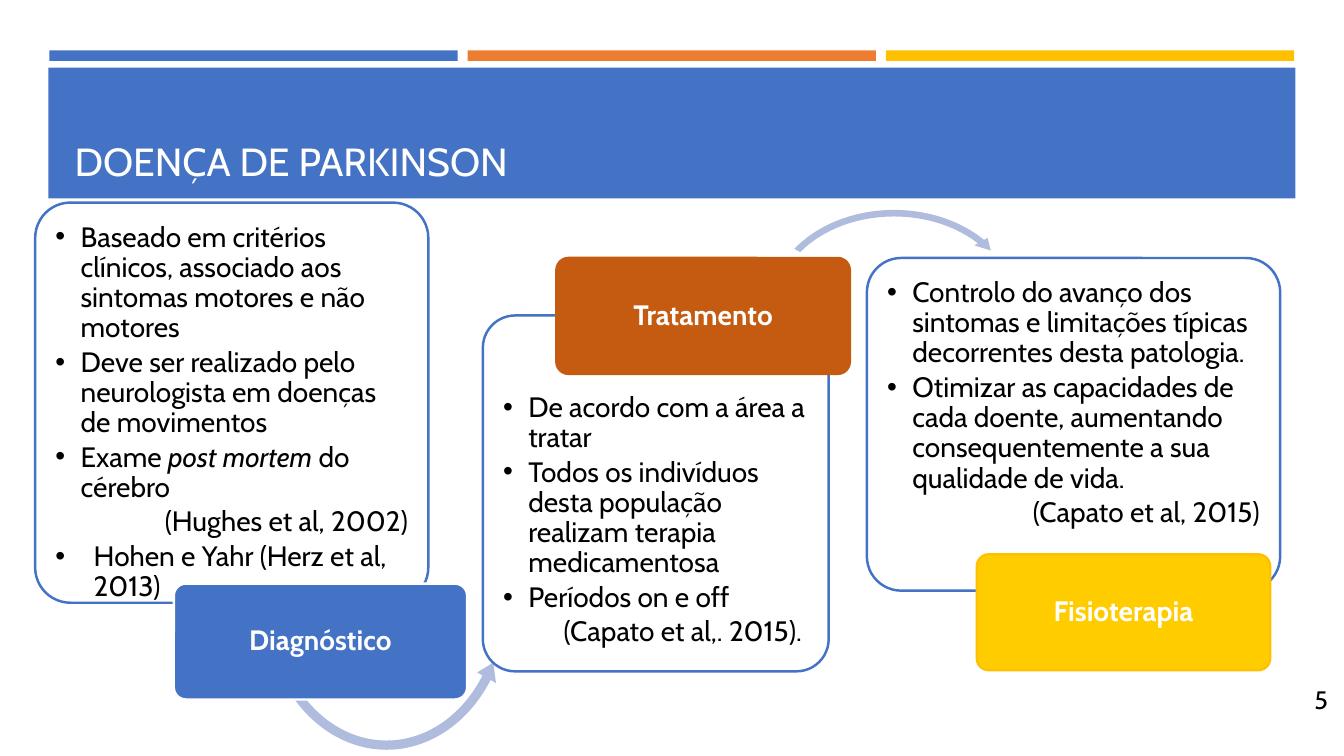
from dataclasses import dataclass

from lxml import etree
from pptx import Presentation
from pptx import util as u
from pptx.dml.color import RGBColor
from pptx.enum import shapes, text
from pptx.oxml.ns import qn

FONT = "Cabin"
BLUE, ORANGE, GOLD = "4472C4", "ED7D31", "FFC000"
RUST, YELLOW, LILAC = "C55A11", "FFCC00", "B0BCDE"
WHITE, BLACK = "FFFFFF", "000000"
WIDTH, HEIGHT = u.Inches(13.33), u.Inches(7.5)
TEXT_CORNER = 0.29  # share of the corner radius added to the text margins


@dataclass
class Area:
    """Left, top, width and height in percent of the slide."""
    left: float
    top: float
    width: float
    height: float

    def place(self) -> tuple[int, int, int, int]:
        return (int(WIDTH * self.left / 100), int(HEIGHT * self.top / 100),
                int(WIDTH * self.width / 100), int(HEIGHT * self.height / 100))


@dataclass
class Item:
    words: str  # parts between asterisks are italic
    indent: float = 0.25
    bullet: bool = True


@dataclass
class Arrow:
    kind: shapes.MSO_SHAPE
    area: Area
    bends: tuple[float, ...]


@dataclass
class Stage:
    panel: Area
    radius: float
    top_margin: float
    items: list[Item]
    label: str
    tag: Area
    fill: str
    line: str
    arrow: Arrow | None = None


def tag_area(left: float, top: float) -> Area:
    return Area(left, top, 21.83, 15.33)


STAGES = [
    Stage(Area(2.62, 26.8, 29.25, 52.93), 0.35, 0.2, [
        Item("Baseado em critérios clínicos, associado aos sintomas motores e não motores"),
        Item("Deve ser realizado pelo neurologista em doenças de movimentos"),
        Item("Exame *post mortem *do cérebro"),
        Item("(Hughes et al, 2002)", 0, False),
        Item("Hohen e Yahr (Herz et al, 2013)", 0.38),
    ], "Diagnóstico", tag_area(12.93, 77.2), BLUE, WHITE,
        Arrow(shapes.MSO_SHAPE.LEFT_CIRCULAR_ARROW, Area(19.2, 59.33, 19.13, 40.67),
              (0.036, 4.492, 22.239, 90.237, 0.042))),
    Stage(Area(35.93, 41.73, 25.73, 47.07), 0.32, 0.77, [
        Item("De acordo com a área a tratar"),
        Item("Todos os indivíduos desta população realizam terapia medicamentosa"),
        Item("Períodos on e off"),
        Item("(Capato et al,. 2015). ", bullet=False),
    ], "Tratamento", tag_area(41.4, 34.13), RUST, RUST,
        Arrow(shapes.MSO_SHAPE.CIRCULAR_ARROW, Area(57, 27.2, 19.05, 26.4),
              (0.033, 4.01, 194.235, 125.755, 0.038))),
    Stage(Area(64.5, 34.13, 30.75, 44), 0.34, 0.2, [
        Item("Controlo do avanço dos sintomas e limitações típicas decorrentes desta patologia."),
        Item("Otimizar as capacidades de cada doente, aumentando consequentemente "
             "a sua qualidade de vida."),
        Item("(Capato et al, 2015)", bullet=False),
    ], "Fisioterapia", tag_area(72.68, 73.33), YELLOW, GOLD),
]


def color(value: str) -> RGBColor:
    return RGBColor.from_string(value)


def add_block(page, kind, area: Area, fill: str, line: str | None = None):
    box = page.shapes.add_shape(kind, *area.place())
    box.shadow.inherit = False
    box.fill.solid()
    box.fill.fore_color.rgb = color(fill)
    if line:
        box.line.color.rgb = color(line)
        box.line.width = u.Pt(1.75)
    else:
        box.line.fill.background()
    return box


def add_rounded(page, area: Area, radius: float, fill: str, line: str):
    box = add_block(page, shapes.MSO_SHAPE.ROUNDED_RECTANGLE, area, fill, line)
    box.adjustments[0] = u.Inches(radius) / min(box.width, box.height)
    box.text_frame.word_wrap = True
    return box


def set_margins(frame, left: float, top: float, right: float, bottom: float) -> None:
    frame.margin_left, frame.margin_top = u.Inches(left), u.Inches(top)
    frame.margin_right, frame.margin_bottom = u.Inches(right), u.Inches(bottom)


def style(para, size: float, ink: str, bold: bool = False) -> None:
    for span in para.runs:
        span.font.name, span.font.size = FONT, u.Pt(size)
        span.font.color.rgb, span.font.bold = color(ink), bold


def set_bullet(para, item: Item) -> None:
    props = para._p.get_or_add_pPr()
    indent = u.Inches(item.indent)
    props.set("marL", str(indent))
    props.set("indent", str(-indent))
    if item.bullet:
        etree.SubElement(props, qn("a:buFont")).set("typeface", "Arial")
        etree.SubElement(props, qn("a:buChar")).set("char", "•")
    else:
        etree.SubElement(props, qn("a:buNone"))


def add_panel(page, stage: Stage) -> None:
    box = add_rounded(page, stage.panel, stage.radius, WHITE, BLUE)
    solid = box._element.spPr.find(qn("a:solidFill"))
    etree.SubElement(solid[0], qn("a:alpha")).set("val", "90000")
    frame = box.text_frame
    frame.vertical_anchor = text.MSO_ANCHOR.TOP
    corner = stage.radius * TEXT_CORNER
    side = 0.2 - corner
    set_margins(frame, side, stage.top_margin - corner, side, side)
    for number, item in enumerate(stage.items):
        para = frame.add_paragraph() if number else frame.paragraphs[0]
        para.level = 1
        para.alignment = text.PP_ALIGN.LEFT if item.bullet else text.PP_ALIGN.RIGHT
        para.line_spacing, para.space_after = 0.9, u.Pt(3)
        set_bullet(para, item)
        for position, part in enumerate(item.words.split("*")):
            span = para.add_run()
            span.text = part
            span.font.italic = position % 2 == 1
        style(para, 20, BLACK)


def add_arrow(page, arrow: Arrow) -> None:
    shape = add_block(page, arrow.kind, arrow.area, LILAC)
    for number, bend in enumerate(arrow.bends):
        shape.adjustments[number] = bend


def add_tag(page, stage: Stage) -> None:
    box = add_rounded(page, stage.tag, 0.12, stage.fill, stage.line)
    frame = box.text_frame
    frame.text = stage.label
    frame.vertical_anchor = text.MSO_ANCHOR.MIDDLE
    set_margins(frame, 0.05, 0.03, 0.05, 0.03)
    para = frame.paragraphs[0]
    para.alignment, para.line_spacing = text.PP_ALIGN.CENTER, 0.9
    style(para, 20, WHITE, bold=True)


def add_header(page) -> None:
    for number, fill in enumerate((BLUE, ORANGE, GOLD)):
        add_block(page, shapes.MSO_SHAPE.RECTANGLE,
                  Area(3.67 + 31.12 * number, 6.67, 30.38, 1.4), fill)
    add_block(page, shapes.MSO_SHAPE.RECTANGLE, Area(3.6, 8.93, 92.78, 17.33), BLUE)
    title = page.shapes.title
    title.left, title.top, title.width, title.height = Area(4.8, 10.27, 90.45, 14.8).place()
    page.shapes._spTree.append(title._element)  # bring in front of the band
    frame = title.text_frame
    frame.text = "DOENÇA DE PARKINSON"
    frame.vertical_anchor = text.MSO_ANCHOR.BOTTOM
    frame.auto_size = text.MSO_AUTO_SIZE.NONE
    frame.paragraphs[0].alignment = text.PP_ALIGN.LEFT
    style(frame.paragraphs[0], 28, WHITE)


def add_page_number(page) -> None:
    box = page.shapes.add_textbox(*Area(97.05, 89.87, 2.03, 5.33).place())
    box.text_frame.text = "5"
    style(box.text_frame.paragraphs[0], 18, BLACK)


def main() -> None:
    deck = Presentation()
    deck.slide_width, deck.slide_height = WIDTH, HEIGHT
    page = deck.slides.add_slide(deck.slide_layouts[5])
    add_header(page)
    # Each stage: text panel, arrow to the next stage, name tag
    for stage in STAGES:
        add_panel(page, stage)
        if stage.arrow:
            add_arrow(page, stage.arrow)
        add_tag(page, stage)
    add_page_number(page)
    deck.save("out.pptx")


if __name__ == "__main__":
    main()
